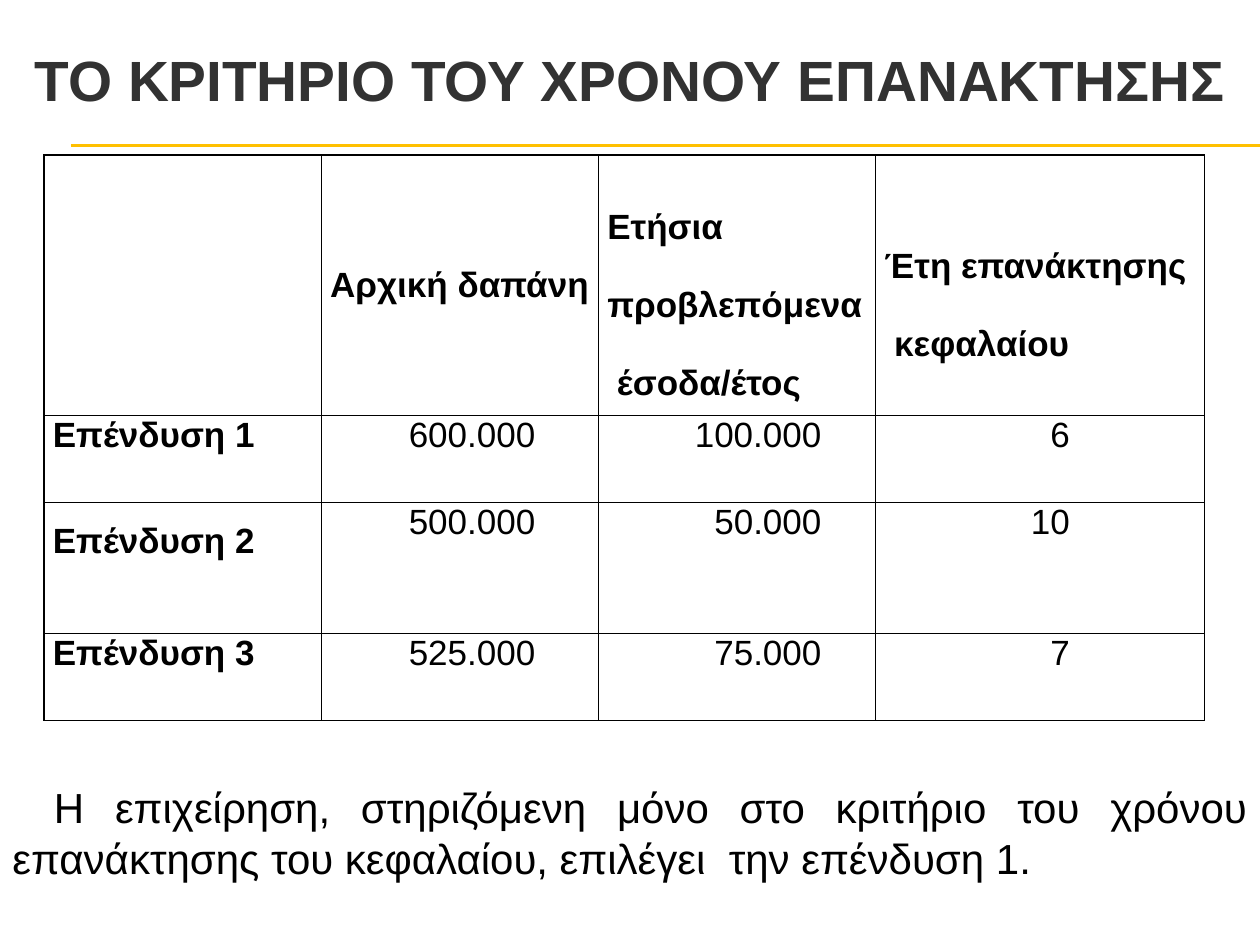
import pptx
import pptx.util
import pptx.dml.color
import pptx.enum.shapes
import pptx.enum.text
import pptx.oxml
import pptx.oxml.ns
from pptx.util import Inches

COLOURS = {"title": "323232", "text": "000000", "rule": "FFC000"}
ALIGN = pptx.enum.text.PP_ALIGN
MIDDLE = pptx.enum.text.MSO_ANCHOR.MIDDLE
TOP = pptx.enum.text.MSO_ANCHOR.TOP

COLUMN_WIDTHS = [2.2, 2.2, 2.2, 2.61]
ROW_HEIGHTS = [2.07, 0.69, 1.04, 0.69]
RIGHT_MARGINS = [0.07, 0.5, 0.43, 1.07]
HEADINGS = [
    [],
    ["Αρχική δαπάνη"],
    ["Ετήσια προβλεπόμενα", " έσοδα/έτος"],
    ["Έτη επανάκτησης", " κεφαλαίου"],
]
INVESTMENTS = [
    ["Επένδυση 1", "600.000", "100.000", "6"],
    ["Επένδυση 2", "500.000", "50.000", "10"],
    ["Επένδυση 3", "525.000", "75.000", "7"],
]


def apply_format(target, values):
    """Set each named attribute of the target."""
    for name, value in values.items():
        setattr(target, name, value)


def write_paragraph(paragraph, text, size, colour="text", bold=False, **layout):
    """Fill a paragraph with one formatted run."""
    run = paragraph.add_run()
    run.text = text
    apply_format(run.font, {"name": "Arial", "size": pptx.util.Pt(size), "bold": bold})
    run.font.color.rgb = pptx.dml.color.RGBColor.from_string(COLOURS[colour])
    apply_format(paragraph, layout)


def add_rule(slide, y):
    """Draw a thin horizontal rule to the right edge of the slide."""
    rule = slide.shapes.add_connector(
        pptx.enum.shapes.MSO_CONNECTOR.STRAIGHT, Inches(0.56), Inches(y), Inches(10), Inches(y))
    rule.line.width = pptx.util.Pt(0.75)
    rule.line.color.rgb = pptx.dml.color.RGBColor.from_string(COLOURS["rule"])
    properties = rule._element.spPr
    properties.append(pptx.oxml.parse_xml(f'<a:effectLst {pptx.oxml.ns.nsdecls("a")}/>'))


def add_title(slide, text):
    """Place the slide title."""
    title = slide.shapes.title
    apply_format(title, {"left": 0, "top": 0, "width": Inches(10), "height": Inches(1.25)})
    apply_format(title.text_frame, {
        "vertical_anchor": MIDDLE, "word_wrap": True,
        "auto_size": pptx.enum.text.MSO_AUTO_SIZE.NONE})
    write_paragraph(title.text_frame.paragraphs[0], text, 32.4, "title", True,
                    alignment=ALIGN.CENTER)


def format_cell(cell, anchor, right_margin=0.07):
    """Give a cell its margins, clear fill and black borders."""
    apply_format(cell, {
        "vertical_anchor": anchor, "margin_left": Inches(0.07),
        "margin_right": Inches(right_margin), "margin_top": 0, "margin_bottom": 0})
    cell.fill.background()
    properties = cell._tc.get_or_add_tcPr()
    for position, side in enumerate(["lnL", "lnR", "lnT", "lnB"]):
        properties.insert(position, pptx.oxml.parse_xml(
            f'<a:{side} {pptx.oxml.ns.nsdecls("a")} w="12700"><a:solidFill>'
            f'<a:srgbClr val="{COLOURS["text"]}"/></a:solidFill></a:{side}>'))


def write_heading(cell, lines):
    """Write a column heading, double spaced when it has several parts."""
    format_cell(cell, MIDDLE)
    spacing = 2.0 if len(lines) > 1 else 1.0
    for number, line in enumerate(lines):
        frame = cell.text_frame
        paragraph = frame.add_paragraph() if number else frame.paragraphs[0]
        write_paragraph(paragraph, line, 20, bold=True, line_spacing=spacing)


def add_payback_table(slide):
    """Build the table of investments and payback years."""
    table = slide.shapes.add_table(
        len(ROW_HEIGHTS), len(COLUMN_WIDTHS), Inches(0.35), Inches(1.23),
        Inches(sum(COLUMN_WIDTHS)), Inches(sum(ROW_HEIGHTS))).table
    apply_format(table, {"first_row": False, "horz_banding": False})
    for column, width in zip(table.columns, COLUMN_WIDTHS):
        column.width = Inches(width)
    for row, height in zip(table.rows, ROW_HEIGHTS):
        row.height = Inches(height)
    for column, lines in enumerate(HEADINGS):
        write_heading(table.cell(0, column), lines)
    for row, investment in enumerate(INVESTMENTS, start=1):
        for column, value in enumerate(investment):
            cell = table.cell(row, column)
            format_cell(cell, TOP, RIGHT_MARGINS[column])
            write_paragraph(cell.text_frame.paragraphs[0], value, 20, bold=column == 0,
                            alignment=ALIGN.RIGHT if column else ALIGN.LEFT)
    apply_format(table.cell(2, 0).text_frame.paragraphs[0],
                 {"line_spacing": 1.5, "space_before": pptx.util.Pt(12)})


def add_conclusion(slide, text):
    """Add the justified closing paragraph with a first-line indent."""
    conclusion = slide.shapes.add_textbox(0, Inches(6.15), Inches(10), Inches(0.91)).text_frame
    apply_format(conclusion, {"word_wrap": True, "vertical_anchor": MIDDLE})
    paragraph = conclusion.paragraphs[0]
    write_paragraph(paragraph, text, 24, alignment=ALIGN.JUSTIFY)
    paragraph._p.get_or_add_pPr().set("indent", str(Inches(0.33)))


def main():
    """Build and save the slide."""
    presentation = pptx.Presentation()
    apply_format(presentation, {"slide_width": Inches(10), "slide_height": Inches(7.5)})
    slide = presentation.slides.add_slide(presentation.slide_layouts[5])
    for y in (1.15, 1.16):
        add_rule(slide, y)
    add_title(slide, "ΤΟ ΚΡΙΤΗΡΙΟ ΤΟΥ ΧΡΟΝΟΥ ΕΠΑΝΑΚΤΗΣΗΣ")
    add_payback_table(slide)
    add_conclusion(slide, "Η επιχείρηση, στηριζόμενη μόνο στο κριτήριο του χρόνου "
                          "επανάκτησης του κεφαλαίου, επιλέγει  την επένδυση 1.")
    presentation.save("out.pptx")


if __name__ == "__main__":
    main()
